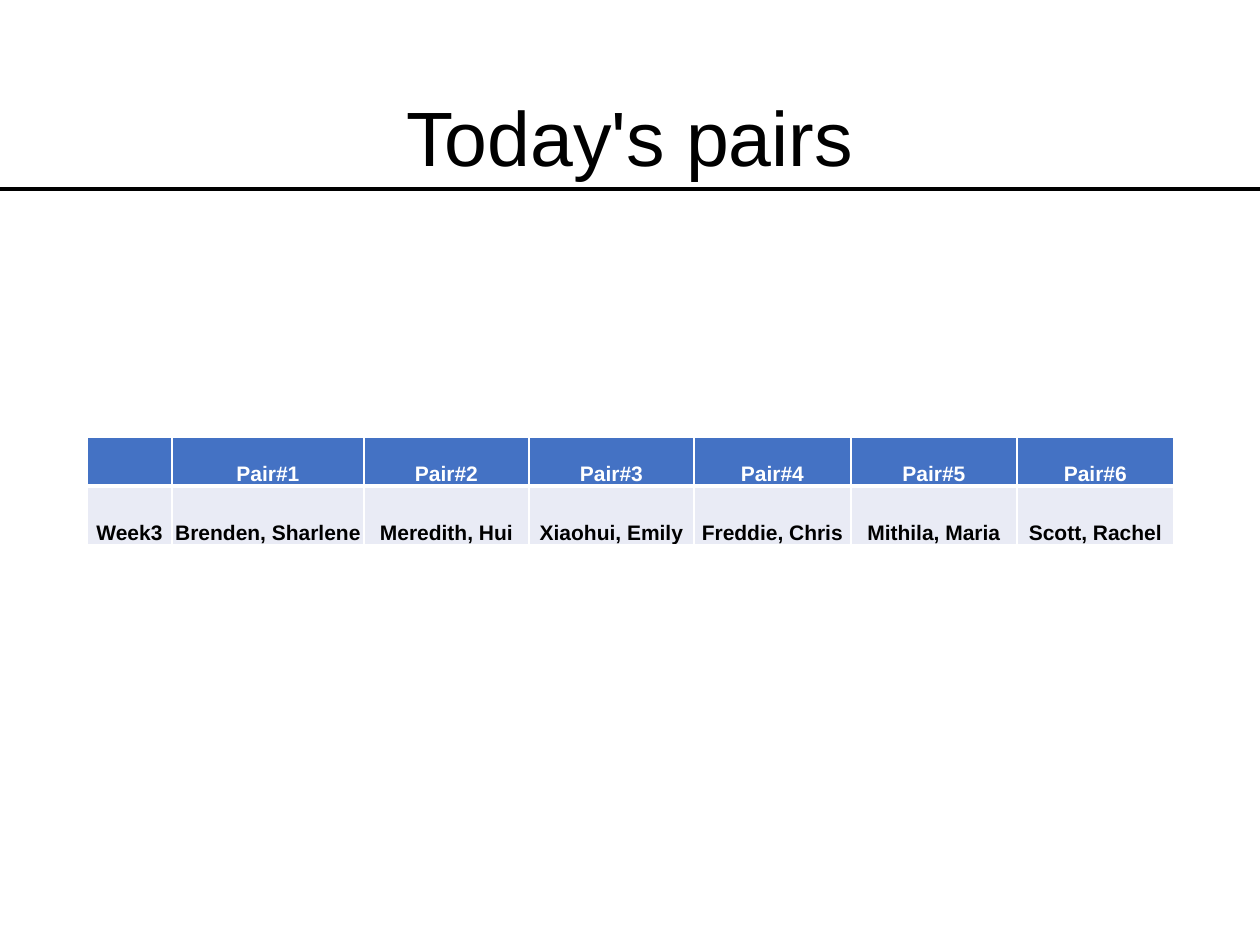
from lxml import etree
from pptx import Presentation
from pptx.dml.color import RGBColor
from pptx.enum.shapes import MSO_CONNECTOR
from pptx.enum.text import MSO_ANCHOR, PP_ALIGN
from pptx.oxml.ns import qn
from pptx.util import Pt

EMU_PER_PX = 914400 / 126
STRAIGHT = MSO_CONNECTOR.STRAIGHT
CENTER = PP_ALIGN.CENTER
MIDDLE, BOTTOM = MSO_ANCHOR.MIDDLE, MSO_ANCHOR.BOTTOM

COL_WIDTHS = [85, 192, 165, 165, 157, 166, 157]
ROW_HEIGHTS = [49, 59]
PAIRS = [
    "Brenden, Sharlene", "Meredith, Hui", "Xiaohui, Emily",
    "Freddie, Chris", "Mithila, Maria", "Scott, Rachel",
]
ROWS = [
    [""] + [f"Pair#{n}" for n in range(1, len(PAIRS) + 1)],
    ["Week3"] + PAIRS,
]
ROW_STYLES = [
    {"fill": "4472C4", "color": "FFFFFF", "top": 1, "bottom": 3},
    {"fill": "E9EBF5", "color": "000000", "top": 3, "bottom": 1},
]


def px(n):
    return round(n * EMU_PER_PX)


def rgb(value):
    return RGBColor.from_string(value)


def set_attrs(obj, values):
    for name, value in values.items():
        setattr(obj, name, value)


def write(tf, text, color, font, para):
    p = tf.paragraphs[0]
    set_attrs(p, para)
    if text:
        r = p.add_run()
        r.text = text
        set_attrs(r.font, {"name": "Arial", **font})
        r.font.color.rgb = rgb(color)


def set_borders(cell, color, widths):
    tcPr = cell._tc.get_or_add_tcPr()
    for i, (side, width) in enumerate(widths.items()):
        ln = etree.Element(qn(f"a:ln{side}"), w=str(Pt(width)))
        fill = etree.SubElement(ln, qn("a:solidFill"))
        etree.SubElement(fill, qn("a:srgbClr"), val=color)
        tcPr.insert(i, ln)


def add_rule(s, x, y, w):
    line = s.shapes.add_connector(STRAIGHT, px(x), px(y), px(x + w), px(y))
    line.line.color.rgb = rgb("000000")
    line.line.width = Pt(2.25)
    etree.SubElement(line._element.spPr, qn("a:effectLst"))


def place_title(s, text, x, y, w, h):
    sp = s.shapes.title
    set_attrs(sp, {"left": px(x), "top": px(y), "width": px(w), "height": px(h)})
    tf = sp.text_frame
    set_attrs(tf, {"word_wrap": True, "vertical_anchor": MIDDLE})
    write(tf, text, "000000", {"size": Pt(44)},
          {"alignment": CENTER, "line_spacing": 0.9})


def add_pairs_table(s, x, y):
    w, h = sum(COL_WIDTHS), sum(ROW_HEIGHTS)
    table = s.shapes.add_table(len(ROWS), len(COL_WIDTHS),
                               px(x), px(y), px(w), px(h)).table
    for col, width in zip(table.columns, COL_WIDTHS):
        col.width = px(width)
    for row, height, texts, style in zip(table.rows, ROW_HEIGHTS, ROWS, ROW_STYLES):
        row.height = px(height)
        for cell, text in zip(row.cells, texts):
            set_attrs(cell, {"vertical_anchor": BOTTOM, "margin_left": px(1),
                             "margin_top": px(1), "margin_right": px(1),
                             "margin_bottom": 0})
            cell.fill.solid()
            cell.fill.fore_color.rgb = rgb(style["fill"])
            set_borders(cell, "FFFFFF", {"L": 1, "R": 1, "T": style["top"],
                                         "B": style["bottom"]})
            write(cell.text_frame, text, style["color"],
                  {"size": Pt(12), "bold": True}, {"alignment": CENTER})


def main():
    prs = Presentation()
    set_attrs(prs, {"slide_width": px(1260), "slide_height": px(945)})
    s = prs.slides.add_slide(prs.slide_layouts[5])
    add_rule(s, 0, 189, 1260)
    place_title(s, "Today's pairs", 87, 50, 1086, 183)
    add_pairs_table(s, 87, 437)
    prs.save("out.pptx")


if __name__ == "__main__":
    main()
